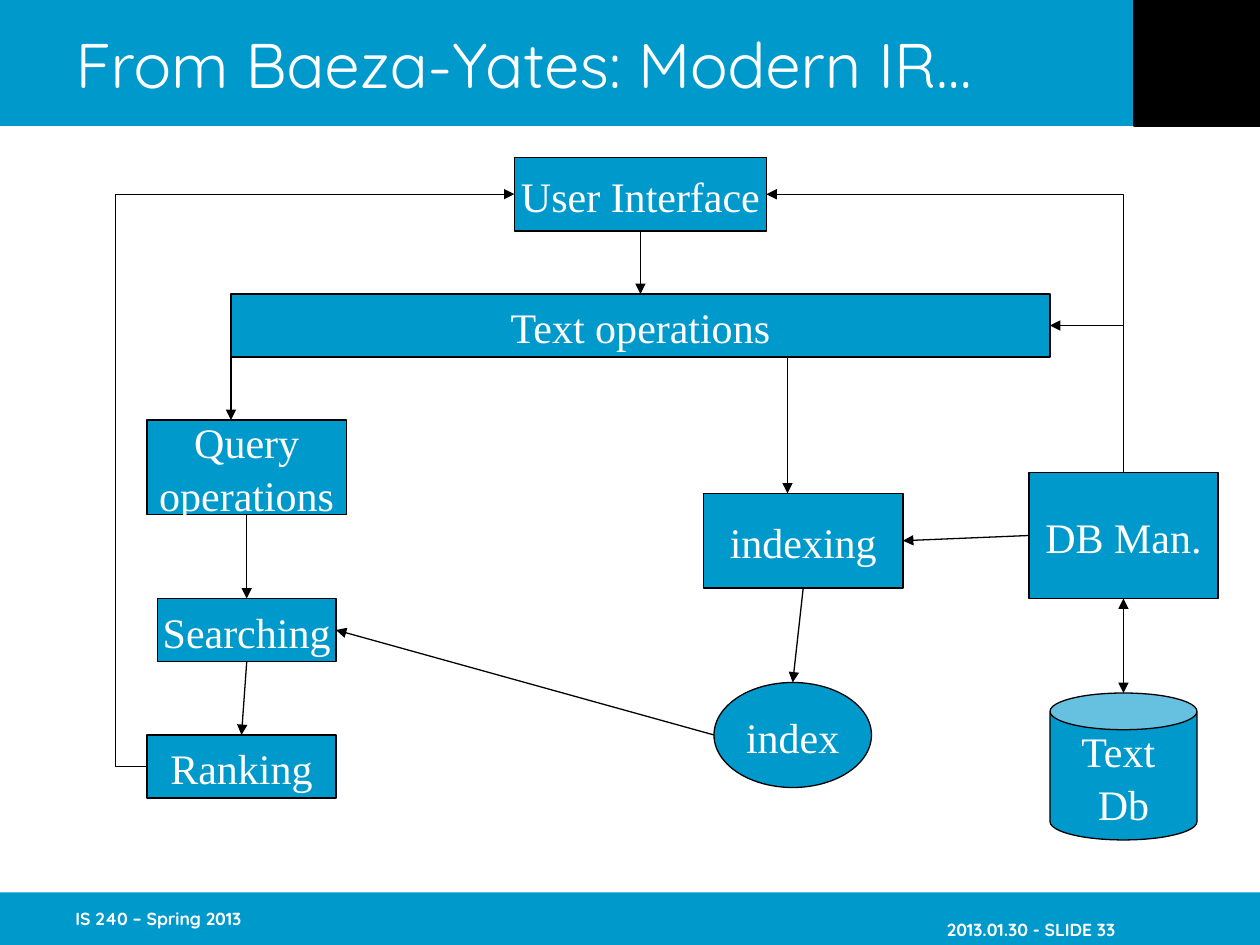
from lxml import etree
from pptx import Presentation
from pptx import util as u
from pptx.dml.color import RGBColor
from pptx.enum import shapes, text
from pptx.oxml.ns import qn

COLOURS = {"blue": "0099CC", "black": "000000", "white": "FFFFFF"}
HEADING, BODY = "Quicksand", "Times New Roman"
KINDS = shapes.MSO_SHAPE
LINES = shapes.MSO_CONNECTOR


def colour(name):
    return RGBColor.from_string(COLOURS[name])


def side(box, name):
    """Midpoint of one side of a box, in points."""
    left, top = box.left.pt, box.top.pt
    width, height = box.width.pt, box.height.pt
    return {
        "top": (left + width / 2, top),
        "bottom": (left + width / 2, top + height),
        "left": (left, top + height / 2),
        "right": (left + width, top + height / 2),
    }[name]


class Diagram:
    def __init__(self, page):
        self.page = page

    def style(self, para, font, size, align, bold=False):
        para.alignment = align
        para.font.name, para.font.size, para.font.bold = font, u.Pt(size), bold
        para.font.color.rgb = colour("white")

    def place(self, box, left, top, width, height):
        box.left, box.top = u.Pt(left), u.Pt(top)
        box.width, box.height = u.Pt(width), u.Pt(height)

    def title(self, words):
        box = self.page.shapes.title
        self.place(box, 36, 0, 612, 72)
        self.page.shapes._spTree.append(box._element)  # in front of the bars
        frame = box.text_frame
        frame.text = words
        frame.auto_size = text.MSO_AUTO_SIZE.NONE
        frame.vertical_anchor = text.MSO_ANCHOR.MIDDLE
        self.style(frame.paragraphs[0], HEADING, 36, text.PP_ALIGN.LEFT)

    def shape(self, kind, bounds, fill="blue", outline=True):
        box = self.page.shapes.add_shape(kind, *map(u.Pt, bounds))
        box.shadow.inherit = False
        box.fill.solid()
        box.fill.fore_color.rgb = colour(fill)
        if outline:
            box.line.color.rgb = colour("black")
            box.line.width = u.Pt(0.75)
        else:
            box.line.fill.background()
        return box

    def node(self, words, bounds, kind=KINDS.RECTANGLE):
        box = self.shape(kind, bounds)
        frame = box.text_frame
        frame.word_wrap = False
        frame.vertical_anchor = text.MSO_ANCHOR.MIDDLE
        frame.text = words
        for para in frame.paragraphs:
            para.line_spacing = 1.05
            self.style(para, BODY, 24, text.PP_ALIGN.CENTER)
        return box

    def footer(self, words, left, align, top_inset=3.6, right_inset=0):
        box = self.page.shapes.add_textbox(*map(u.Pt, (left, 510, 150, 30)))
        frame = box.text_frame
        frame.word_wrap = True
        frame.vertical_anchor = text.MSO_ANCHOR.MIDDLE
        frame.margin_top, frame.margin_right = u.Pt(top_inset), u.Pt(right_inset)
        frame.text = words
        self.style(frame.paragraphs[0], HEADING, 10, align, bold=True)

    def arrow(self, start, end, kind=LINES.STRAIGHT, both=False):
        line = self.page.shapes.add_connector(kind, *map(u.Pt, (*start, *end)))
        line.line.color.rgb = colour("black")
        line.line.width = u.Pt(0.75)
        stroke = line.line._get_or_add_ln()
        for tag in ("a:headEnd", "a:tailEnd") if both else ("a:tailEnd",):
            etree.SubElement(stroke, qn(tag), type="triangle")
        etree.SubElement(line._element.spPr, qn("a:effectLst"))
        return line

    def corner_arrow(self, start, end):
        """Arrow that runs up from start, then left to end."""
        mid_x, mid_y = (start[0] + end[0]) / 2, (start[1] + end[1]) / 2
        half_rise, half_run = (start[1] - end[1]) / 2, (start[0] - end[0]) / 2
        line = self.arrow((mid_x + half_rise, mid_y - half_run),
                          (mid_x - half_rise, mid_y + half_run), LINES.ELBOW)
        properties = line._element.spPr
        properties.find(qn("a:xfrm")).set("rot", str(90 * 60000))
        properties.find(qn("a:prstGeom")).set("prst", "bentConnector2")

    def loop_arrow(self, start, end, reach):
        """Arrow that steps left of start by reach, then goes up and right to end."""
        line = self.arrow(start, end, LINES.ELBOW)
        guides = line._element.spPr.find(qn("a:prstGeom")).get_or_add_avLst()
        bend = round(-reach / (end[0] - start[0]) * 100000)
        etree.SubElement(guides, qn("a:gd"), name="adj1", fmla=f"val {bend}")


def main():
    deck = Presentation()
    deck.slide_width, deck.slide_height = u.Pt(720), u.Pt(540)
    diagram = Diagram(deck.slides.add_slide(deck.slide_layouts[5]))

    diagram.shape(KINDS.RECTANGLE, (0, 0, 720, 72), outline=False)
    diagram.shape(KINDS.RECTANGLE, (0, 510, 720, 30), outline=False)
    diagram.shape(KINDS.RECTANGLE, (648, 0, 72, 72), fill="black")
    diagram.footer("2013.01.30 - SLIDE 33", 534, text.PP_ALIGN.RIGHT, 16, 46.8)
    diagram.footer("IS 240 – Spring 2013", 36, text.PP_ALIGN.LEFT)
    diagram.title("From Baeza-Yates: Modern IR…")

    interface = diagram.node("User Interface", (294, 90, 144, 42))
    operations = diagram.node("Text operations", (132, 168, 468, 36))
    indexing = diagram.node("indexing", (402, 282, 114, 54))
    manager = diagram.node("DB Man.", (588, 270, 108, 72))
    database = diagram.node("Text \nDb", (600, 396, 84, 84), KINDS.CAN)
    index = diagram.node("index", (408, 390, 90, 60), KINDS.OVAL)
    query = diagram.node("Query\noperations", (84, 240, 114, 54))
    searching = diagram.node("Searching", (90, 342, 102, 36))
    ranking = diagram.node("Ranking", (84, 420, 108, 36))

    for source, leaving, target, entering in (
        (index, "left", searching, "right"),
        (manager, "left", indexing, "right"),
        (indexing, "bottom", index, "top"),
        (interface, "bottom", operations, "top"),
        (query, "bottom", searching, "top"),
        (searching, "bottom", ranking, "top"),
    ):
        diagram.arrow(side(source, leaving), side(target, entering))
    diagram.arrow(side(database, "top"), side(manager, "bottom"), both=True)

    operations_bottom = side(operations, "bottom")[1]
    for x, target in ((450, indexing), (132, query)):
        diagram.arrow((x, operations_bottom), (x, target.top.pt))

    for target in (operations, interface):
        diagram.corner_arrow(side(manager, "top"), side(target, "right"))
    diagram.loop_arrow(side(ranking, "left"), side(interface, "left"), 18)

    deck.save("out.pptx")


if __name__ == "__main__":
    main()
